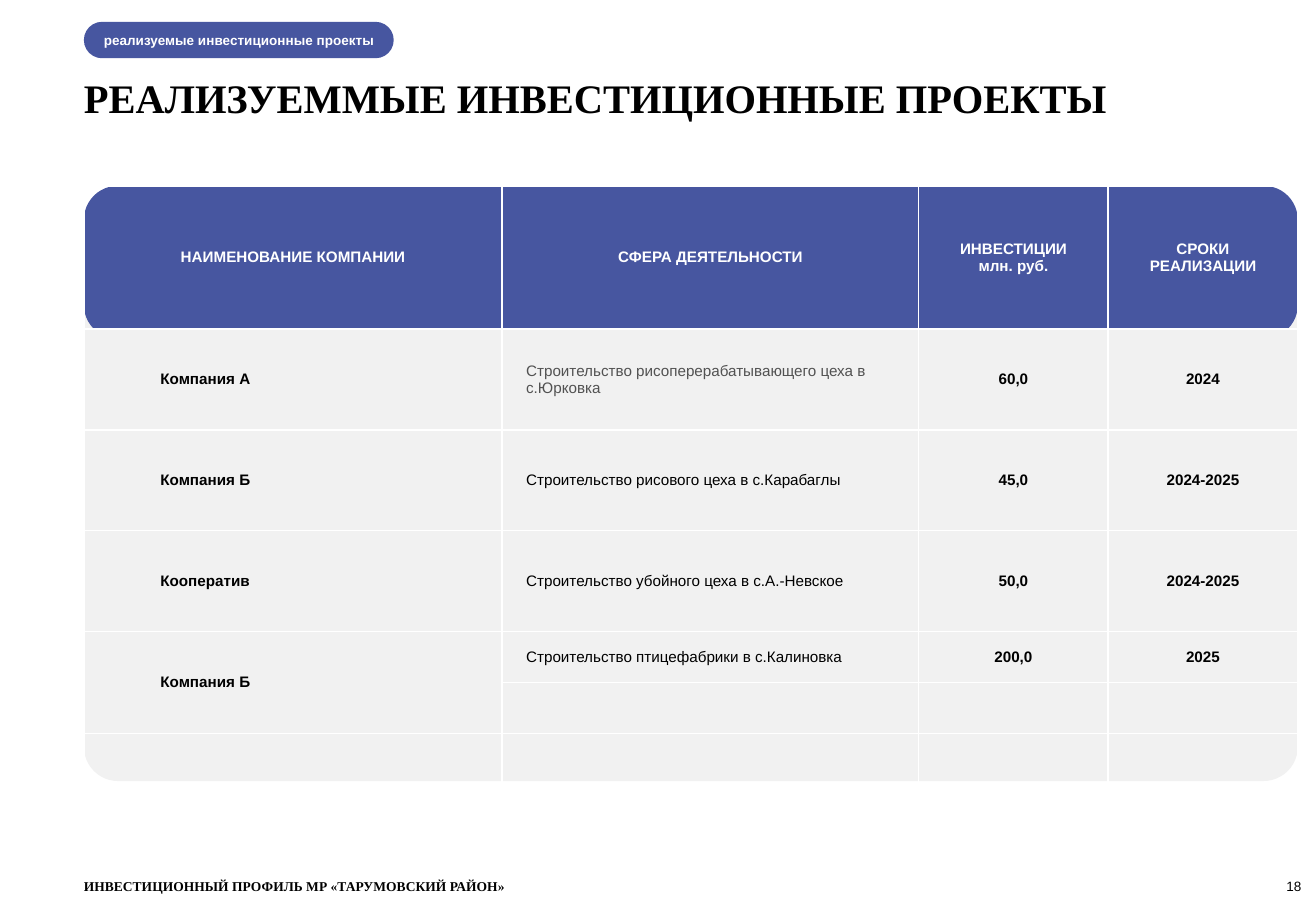
from lxml.etree import SubElement
from pptx import Presentation
from pptx.dml.color import RGBColor
from pptx.enum.shapes import MSO_SHAPE
from pptx.enum.text import MSO_ANCHOR, PP_ALIGN
from pptx.oxml.ns import qn
from pptx.util import Inches, Pt

BLUE, GREY, WHITE, BLACK = "4756A0", "F1F1F1", "FFFFFF", "000000"
LEFT, WIDTH = 0.69, 9.99
COLUMN_WIDTHS = [3.44, 3.43, 1.56, 1.56]
ROW_HEIGHTS = [1.18, 0.83, 0.83, 0.83, 0.42, 0.42, 0.42]
HEADERS = ["НАИМЕНОВАНИЕ КОМПАНИИ", "СФЕРА ДЕЯТЕЛЬНОСТИ",
           "ИНВЕСТИЦИИ\nмлн. руб.", "СРОКИ\nРЕАЛИЗАЦИИ"]
PROJECTS = [
    ["Компания А", "Строительство рисоперерабатывающего цеха в с.Юрковка", "60,0", "2024"],
    ["Компания Б", "Строительство рисового цеха в с.Карабаглы", "45,0", "2024-2025"],
    ["Кооператив", "Строительство убойного цеха в с.А.-Невское", "50,0", "2024-2025"],
    ["Компания Б", "Строительство птицефабрики в с.Калиновка", "200,0", "2025"],
]
COLUMN_MARGINS = [(0.63, 0.04), (0.2, 0), (0, 0), (0, 0)]


def rgb(color):
    """Turn a hex string into a colour."""
    return RGBColor.from_string(color)


def write(frame, text, size, color=BLACK, bold=False, font="Arial", align=PP_ALIGN.LEFT):
    """Fill a text frame with evenly formatted paragraphs."""
    frame.text = text
    for paragraph in frame.paragraphs:
        paragraph.alignment = align
        paragraph.font.name = font
        paragraph.font.size = Pt(size)
        paragraph.font.bold = bold
        paragraph.font.color.rgb = rgb(color)


def set_margins(target, left=0, top=0, right=0, bottom=0):
    """Set the inner margins of a text frame or a cell."""
    target.margin_left, target.margin_top = Inches(left), Inches(top)
    target.margin_right, target.margin_bottom = Inches(right), Inches(bottom)


def place(shape, left, top, width, height):
    """Move and size a shape."""
    shape.left, shape.top = Inches(left), Inches(top)
    shape.width, shape.height = Inches(width), Inches(height)


def add_panel(slide, left, top, width, height, rounding, color):
    """Add a plain rounded rectangle."""
    panel = slide.shapes.add_shape(MSO_SHAPE.ROUNDED_RECTANGLE, Inches(left),
                                   Inches(top), Inches(width), Inches(height))
    panel.adjustments[0] = rounding
    panel.shadow.inherit = False
    panel.fill.solid()
    panel.fill.fore_color.rgb = rgb(color)
    panel.line.fill.background()
    return panel


def add_title(slide, text):
    """Format the title placeholder."""
    title = slide.shapes.title
    place(title, LEFT, 0.6, 10.02, 0.4)
    set_margins(title.text_frame)
    title.text_frame.vertical_anchor = MSO_ANCHOR.TOP
    write(title.text_frame, text, 24, bold=True, font="Times New Roman")


def add_label(slide, left, width, text, anchor=MSO_ANCHOR.TOP, **style):
    """Add a small line of text at the foot of the slide."""
    box = slide.shapes.add_textbox(Inches(left), Inches(7.23), Inches(width), Inches(0.13))
    box.text_frame.word_wrap = True
    box.text_frame.vertical_anchor = anchor
    set_margins(box.text_frame)
    write(box.text_frame, text, 8, **style)


def add_borders(cell):
    """Draw white one-point borders around a cell."""
    properties = cell._tc.get_or_add_tcPr()
    for side in ("a:lnL", "a:lnR", "a:lnT", "a:lnB"):
        line = SubElement(properties, qn(side), w=str(Pt(1)))
        SubElement(SubElement(line, qn("a:solidFill")), qn("a:srgbClr"), val=WHITE)


def add_projects_table(slide):
    """Add the projects table over the rounded panels."""
    table = slide.shapes.add_table(
        len(ROW_HEIGHTS), len(COLUMN_WIDTHS), Inches(LEFT), Inches(1.53),
        Inches(WIDTH), Inches(sum(ROW_HEIGHTS))).table
    table.first_row = table.horz_banding = False
    for column, width in zip(table.columns, COLUMN_WIDTHS):
        column.width = Inches(width)
    for row, height in zip(table.rows, ROW_HEIGHTS):
        row.height = Inches(height)
    for cell in table.iter_cells():
        add_borders(cell)
        cell.fill.background()
        cell.vertical_anchor = MSO_ANCHOR.MIDDLE
        set_margins(cell)
    for index, text in enumerate(HEADERS):
        cell = table.cell(0, index)
        set_margins(cell, top=0.24, bottom=0.24)
        write(cell.text_frame, text, 9, WHITE, True, align=PP_ALIGN.CENTER)
    for row, project in enumerate(PROJECTS, 1):
        for column, text in enumerate(project):
            cell = table.cell(row, column)
            left, right = COLUMN_MARGINS[column]
            set_margins(cell, left=left, right=right)
            color = "525252" if (row, column) == (1, 1) else BLACK
            align = PP_ALIGN.CENTER if column > 1 else PP_ALIGN.LEFT
            write(cell.text_frame, text, 9, color, column != 1, align=align)
            if row < len(PROJECTS):
                cell.fill.solid()
                cell.fill.fore_color.rgb = rgb(GREY)
    table.cell(4, 0).merge(table.cell(5, 0))


def main():
    """Build the slide of investment projects and save it."""
    presentation = Presentation()
    presentation.slide_width, presentation.slide_height = Inches(10.83), Inches(7.5)
    slide = presentation.slides.add_slide(presentation.slide_layouts[5])
    add_panel(slide, LEFT, 2.14, WIDTH, 4.29, 0.066, GREY)
    add_panel(slide, LEFT, 1.53, WIDTH, 1.26, 0.222, BLUE)
    add_title(slide, "РЕАЛИЗУЕММЫЕ ИНВЕСТИЦИОННЫЕ ПРОЕКТЫ")
    tag = add_panel(slide, LEFT, 0.18, 2.55, 0.3, 0.5, BLUE)
    set_margins(tag.text_frame, left=0.12)
    tag.text_frame.vertical_anchor = MSO_ANCHOR.MIDDLE
    write(tag.text_frame, "реализуемые инвестиционные проекты", 8, WHITE, True)
    add_label(slide, 9.91, 0.8, "18", MSO_ANCHOR.BOTTOM, align=PP_ALIGN.RIGHT)
    add_projects_table(slide)
    add_label(slide, LEFT, 8, "ИНВЕСТИЦИОННЫЙ ПРОФИЛЬ МР «ТАРУМОВСКИЙ РАЙОН»",
              bold=True, font="Times New Roman")
    presentation.save("out.pptx")


if __name__ == "__main__":
    main()
